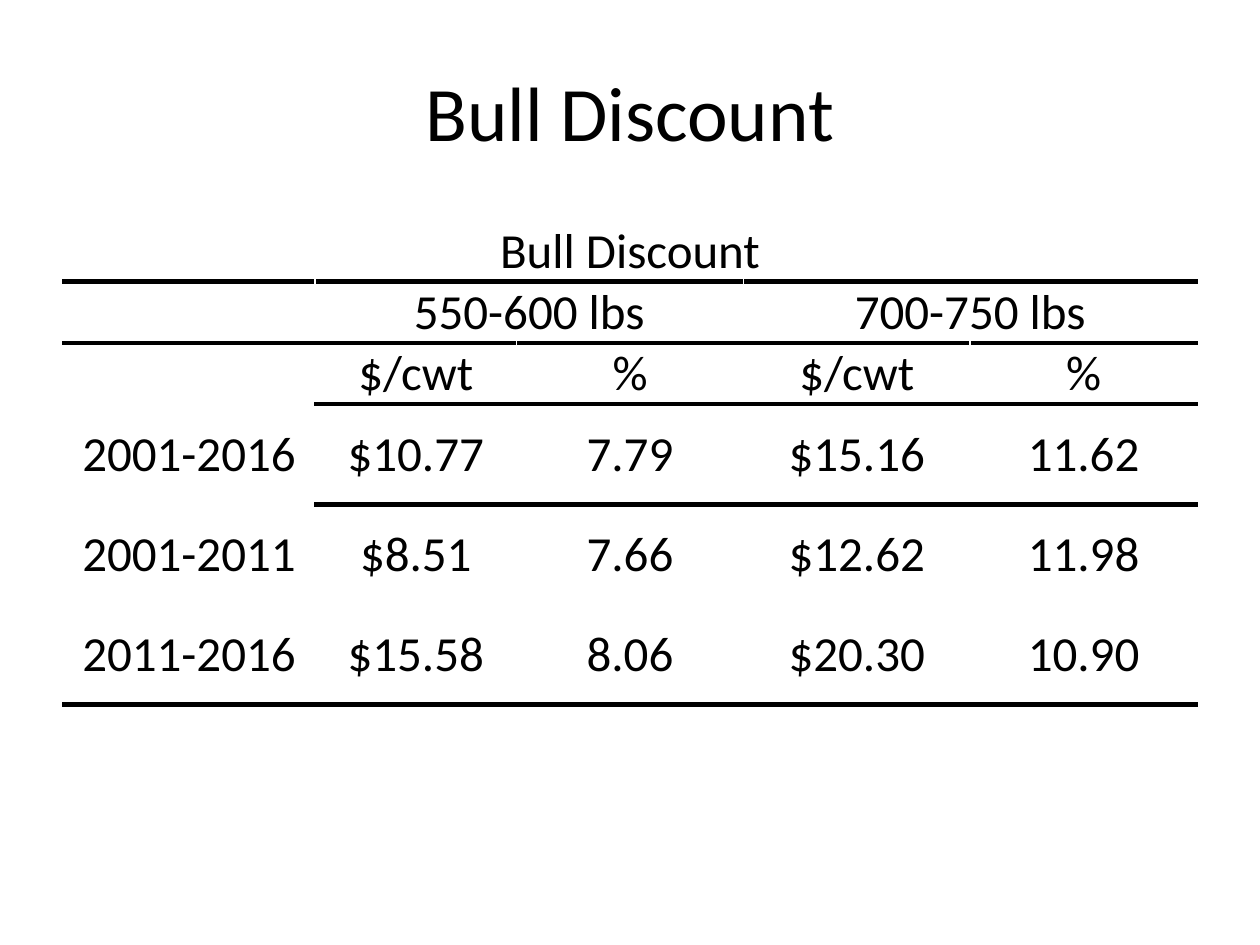
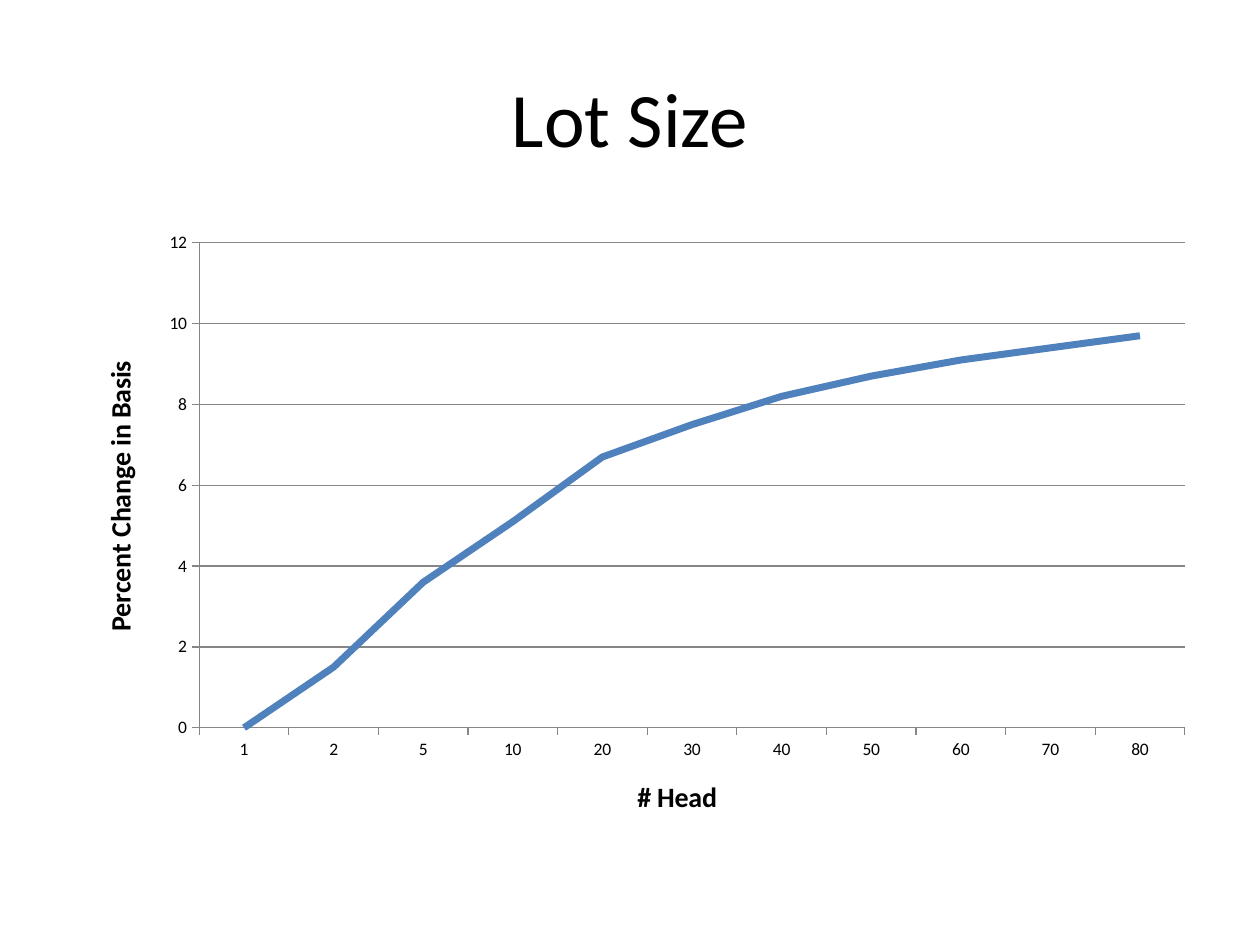
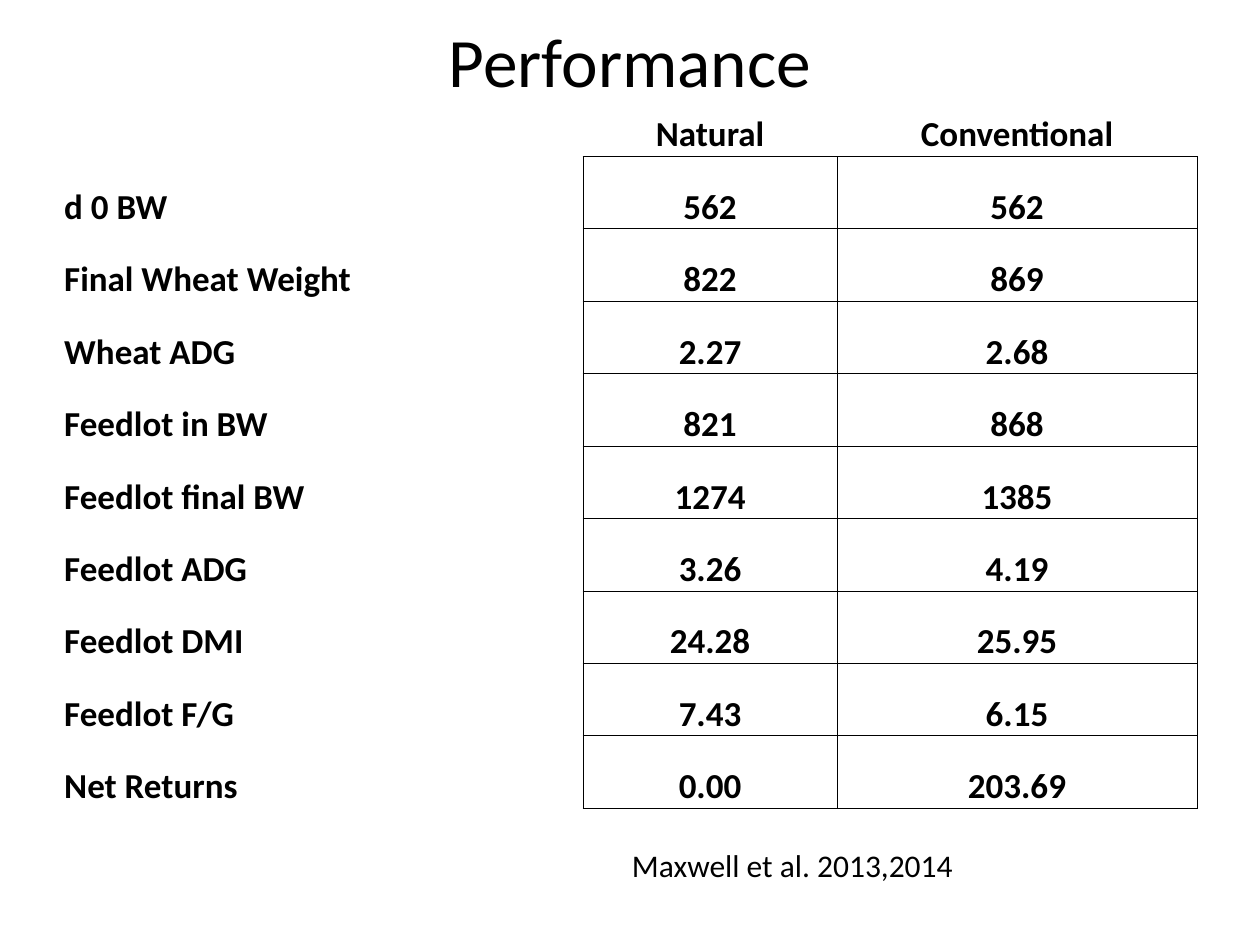
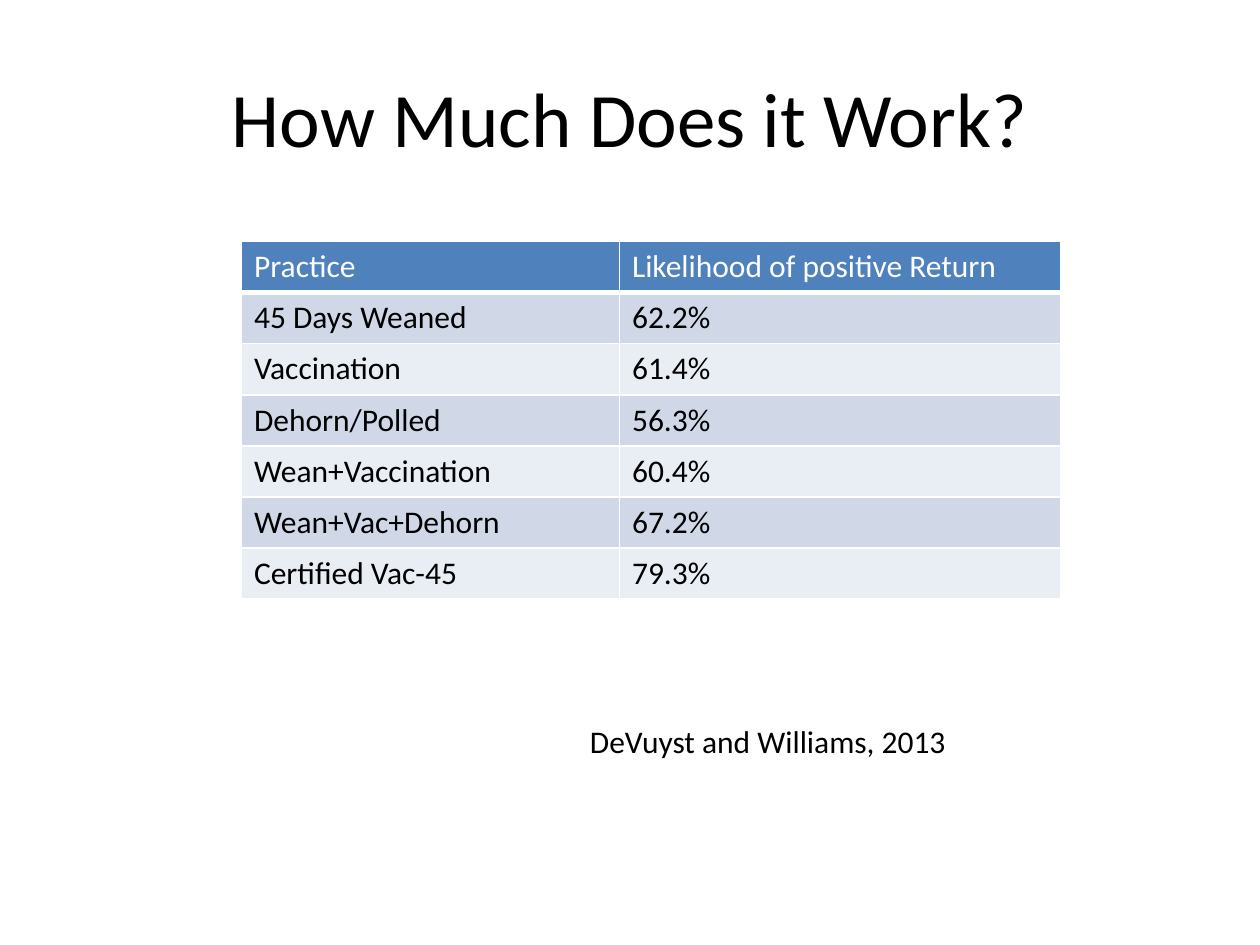
"""Build four slides on cattle price discounts, lot size and performance."""
import dataclasses
import typing

import lxml.etree
import pptx
import pptx.chart.data
import pptx.dml.color
import pptx.enum.chart
import pptx.enum.text
import pptx.oxml.ns
import pptx.util

Pt = pptx.util.Pt
ALIGN = pptx.enum.text.PP_ALIGN
ANCHOR = pptx.enum.text.MSO_ANCHOR
FONT = "Calibri"
COLOURS = {
    "text": "000000",
    "white": "FFFFFF",
    "accent": "4F81BD",
    "band_dark": "D0D8E8",
    "band_light": "E9EDF4",
    "axis": "868686",
}


@dataclasses.dataclass(frozen=True)
class Box:
    """A place on the slide in points."""

    left: float
    top: float
    width: float
    height: float

    def lengths(self) -> tuple:
        """Return the four lengths in the order python-pptx takes them."""
        return tuple(Pt(value) for value in dataclasses.astuple(self))


@dataclasses.dataclass(frozen=True)
class Border:
    """A cell edge; a width of zero draws nothing."""

    colour: str
    width: float


NO_BORDER = Border("text", 0)
THIN_BLACK = Border("text", 0.5)
THICK_BLACK = Border("text", 3)
THIN_WHITE = Border("white", 1)
THICK_WHITE = Border("white", 3)


@dataclasses.dataclass(frozen=True)
class TableDesign:
    """Contents, sizes and rules of one table."""

    rows: list
    left: float
    top: float
    widths: list
    heights: list
    size: float
    horizontal: typing.Callable[[int, int], Border]
    vertical: typing.Callable[[int, int], Border]
    align: typing.Callable[[int], ALIGN]
    anchor: ANCHOR
    margins: tuple = (0.72, 0.72, 0.72, 0)
    bold: bool = False
    merges: tuple = ()
    fill: typing.Callable[[int], typing.Optional[str]] = lambda row: None
    text_colour: typing.Callable[[int], str] = lambda row: "text"


BULL_ROWS = [
    ["Bull Discount", "", "", "", ""],
    ["", "550-600 lbs", "", "700-750 lbs", ""],
    ["", "$/cwt", "%", "$/cwt", "%"],
    ["2001-2016", "$10.77", "7.79", "$15.16", "11.62"],
    ["2001-2011", "$8.51", "7.66", "$12.62", "11.98"],
    ["2011-2016", "$15.58", "8.06", "$20.30", "10.90"],
]
BULL_RULE_STARTS = {1: 0, 2: 0, 3: 1, 4: 1, 6: 0}
BULL_TABLE = TableDesign(
    rows=BULL_ROWS,
    left=36,
    top=126,
    widths=[144, 115.2, 129.6, 129.6, 129.6],
    heights=[34.8] * 3 + [57.3] * 3,
    size=28,
    horizontal=lambda edge, column: (
        THICK_BLACK if column >= BULL_RULE_STARTS.get(edge, 5) else THIN_WHITE),
    vertical=lambda row, edge: THIN_WHITE,
    align=lambda column: ALIGN.CENTER,
    anchor=ANCHOR.MIDDLE,
    merges=((0, 0, 4), (1, 1, 2), (1, 3, 4)),
)

PERFORMANCE_ROWS = [
    ["", "Natural", "Conventional"],
    ["d 0 BW", "562", "562"],
    ["Final Wheat Weight", "822", "869"],
    ["Wheat ADG", "2.27", "2.68"],
    ["Feedlot in BW", "821", "868"],
    ["Feedlot final BW", "1274", "1385"],
    ["Feedlot ADG", "3.26", "4.19"],
    ["Feedlot DMI", "24.28", "25.95"],
    ["Feedlot F/G", "7.43", "6.15"],
    ["Net Returns", "0.00", "203.69"],
]


def performance_border(row: int, column: int) -> Border:
    """Rule only the value cells, below the header and right of the labels."""
    return THIN_BLACK if row >= 1 and column >= 1 else NO_BORDER


PERFORMANCE_TABLE = TableDesign(
    rows=PERFORMANCE_ROWS,
    left=36,
    top=48,
    widths=[297.2, 145.2, 205.6],
    heights=[41.4] * len(PERFORMANCE_ROWS),
    size=20,
    horizontal=performance_border,
    vertical=performance_border,
    align=lambda column: ALIGN.CENTER if column else ALIGN.LEFT,
    anchor=ANCHOR.BOTTOM,
    bold=True,
)

PRACTICE_ROWS = [
    ["Practice", "Likelihood of positive Return"],
    ["45 Days Weaned", "62.2%"],
    ["Vaccination", "61.4%"],
    ["Dehorn/Polled", "56.3%"],
    ["Wean+Vaccination", "60.4%"],
    ["Wean+Vac+Dehorn", "67.2%"],
    ["Certified Vac-45", "79.3%"],
]
PRACTICE_TABLE = TableDesign(
    rows=PRACTICE_ROWS,
    left=138,
    top=138,
    widths=[216, 252],
    heights=[29.2] * len(PRACTICE_ROWS),
    size=18,
    horizontal=lambda edge, column: THICK_WHITE if edge == 1 else THIN_WHITE,
    vertical=lambda row, edge: THIN_WHITE,
    align=lambda column: ALIGN.LEFT,
    anchor=ANCHOR.TOP,
    margins=(7.2, 3.6, 7.2, 3.6),
    fill=lambda row: (
        "accent" if row == 0 else "band_dark" if row % 2 else "band_light"),
    text_colour=lambda row: "text" if row else "white",
)

LOT_SIZE_CHANGES = {
    "1": 0, "2": 1.5, "5": 3.6, "10": 5.1, "20": 6.7, "30": 7.5,
    "40": 8.2, "50": 8.7, "60": 9.1, "70": 9.4, "80": 9.7,
}


def rgb(name: str) -> pptx.dml.color.RGBColor:
    """Return a named colour."""
    return pptx.dml.color.RGBColor.from_string(COLOURS[name])


def write(text_frame, text: str, *, size: float, bold: bool = False,
          colour: str = "text", align=None, anchor=None) -> None:
    """Put one formatted run of text in a text frame."""
    if anchor is not None:
        text_frame.vertical_anchor = anchor
    paragraph = text_frame.paragraphs[0]
    if align is not None:
        paragraph.alignment = align
    run = paragraph.add_run()
    run.text = text
    run.font.name = FONT
    run.font.size = Pt(size)
    run.font.bold = bold
    run.font.color.rgb = rgb(colour)


def add_titled_slide(presentation, title: str, top: float = 21.6,
                     height: float = 90, size: float = 44):
    """Add a slide with a centred title."""
    slide = presentation.slides.add_slide(presentation.slide_layouts[5])
    shape = slide.shapes.title
    shape.left, shape.top, shape.width, shape.height = Box(
        36, top, 648, height).lengths()
    write(shape.text_frame, title, size=size,
          align=ALIGN.CENTER, anchor=ANCHOR.MIDDLE)
    return slide


def add_citation(slide, text: str, box: Box) -> None:
    """Add the source line under a table."""
    shape = slide.shapes.add_textbox(*box.lengths())
    shape.text_frame.word_wrap = True
    shape.text_frame.auto_size = pptx.enum.text.MSO_AUTO_SIZE.SHAPE_TO_FIT_TEXT
    write(shape.text_frame, text, size=18)


def set_border(cell, side: str, border: Border) -> None:
    """Draw one edge of a cell, side being L, R, T or B."""
    qn = pptx.oxml.ns.qn
    properties = cell._tc.get_or_add_tcPr()
    line = lxml.etree.SubElement(
        properties, qn(f"a:ln{side}"), w=str(Pt(border.width)))
    if not border.width:
        lxml.etree.SubElement(line, qn("a:noFill"))
        return
    fill = lxml.etree.SubElement(line, qn("a:solidFill"))
    lxml.etree.SubElement(fill, qn("a:srgbClr"), val=COLOURS[border.colour])


def format_cell(cell, design: TableDesign, row: int, column: int) -> None:
    """Give a cell its edges, fill, margins and text."""
    set_border(cell, "L", design.vertical(row, column))
    set_border(cell, "R", design.vertical(row, column + 1))
    set_border(cell, "T", design.horizontal(row, column))
    set_border(cell, "B", design.horizontal(row + 1, column))
    fill = design.fill(row)
    if fill:
        cell.fill.solid()
        cell.fill.fore_color.rgb = rgb(fill)
    else:
        cell.fill.background()
    (cell.margin_left, cell.margin_top,
     cell.margin_right, cell.margin_bottom) = map(Pt, design.margins)
    cell.vertical_anchor = design.anchor
    text = design.rows[row][column]
    if text:
        write(cell.text_frame, text, size=design.size, bold=design.bold,
              colour=design.text_colour(row), align=design.align(column))


def add_designed_table(slide, design: TableDesign) -> None:
    """Add a table drawn to its design."""
    box = Box(design.left, design.top, sum(design.widths), sum(design.heights))
    table = slide.shapes.add_table(
        len(design.heights), len(design.widths), *box.lengths()).table
    table.first_row = table.horz_banding = False
    for column, width in zip(table.columns, design.widths):
        column.width = Pt(width)
    for row, height in zip(table.rows, design.heights):
        row.height = Pt(height)
    for row in range(len(design.heights)):
        for column in range(len(design.widths)):
            format_cell(table.cell(row, column), design, row, column)
    for row, first, last in design.merges:
        table.cell(row, first).merge(table.cell(row, last))


def format_axis(axis, title: str) -> None:
    """Give a chart axis its title, ticks and line."""
    axis.has_title = True
    write(axis.axis_title.text_frame, title, size=16, bold=True)
    axis.major_tick_mark = pptx.enum.chart.XL_TICK_MARK.OUTSIDE
    axis.minor_tick_mark = pptx.enum.chart.XL_TICK_MARK.NONE
    axis.format.line.color.rgb = rgb("axis")
    axis.format.line.width = Pt(0.75)


def add_lot_size_chart(slide, box: Box) -> None:
    """Add the line chart of basis change by lot size."""
    data = pptx.chart.data.CategoryChartData()
    data.categories = list(LOT_SIZE_CHANGES)
    data.add_series("Series 1", list(LOT_SIZE_CHANGES.values()))
    chart = slide.shapes.add_chart(
        pptx.enum.chart.XL_CHART_TYPE.LINE, *box.lengths(), data).chart
    chart.has_legend = chart.has_title = False
    chart.font.name = FONT
    chart.font.size = Pt(10)
    chart.font.color.rgb = rgb("text")
    format_axis(chart.category_axis, "# Head")
    format_axis(chart.value_axis, "Percent Change in Basis")
    chart.value_axis.minimum_scale = 0
    chart.value_axis.maximum_scale = 12
    chart.value_axis.major_unit = 2
    chart.value_axis.has_major_gridlines = True
    gridline = chart.value_axis.major_gridlines.format.line
    gridline.color.rgb = rgb("axis")
    gridline.width = Pt(0.75)
    chart.plots[0].vary_by_categories = False
    series = chart.plots[0].series[0]
    series.smooth = False
    series.format.line.color.rgb = rgb("accent")
    series.format.line.width = Pt(4)


def main() -> None:
    """Build and save the presentation."""
    presentation = pptx.Presentation()
    presentation.slide_width, presentation.slide_height = Pt(720), Pt(540)

    slide = add_titled_slide(presentation, "Bull Discount", top=18)
    add_designed_table(slide, BULL_TABLE)

    slide = add_titled_slide(presentation, "Lot Size")
    add_lot_size_chart(slide, Box(42, 126, 648, 356.4))

    slide = add_titled_slide(
        presentation, "Performance", top=6, height=56, size=39.6)
    add_designed_table(slide, PERFORMANCE_TABLE)
    add_citation(slide, "Maxwell et al. 2013,2014", Box(354, 480, 264, 30))

    slide = add_titled_slide(presentation, "How Much Does it Work?")
    add_designed_table(slide, PRACTICE_TABLE)
    add_citation(slide, "DeVuyst and Williams, 2013", Box(330, 409, 348, 29))

    presentation.save("out.pptx")


if __name__ == "__main__":
    main()
